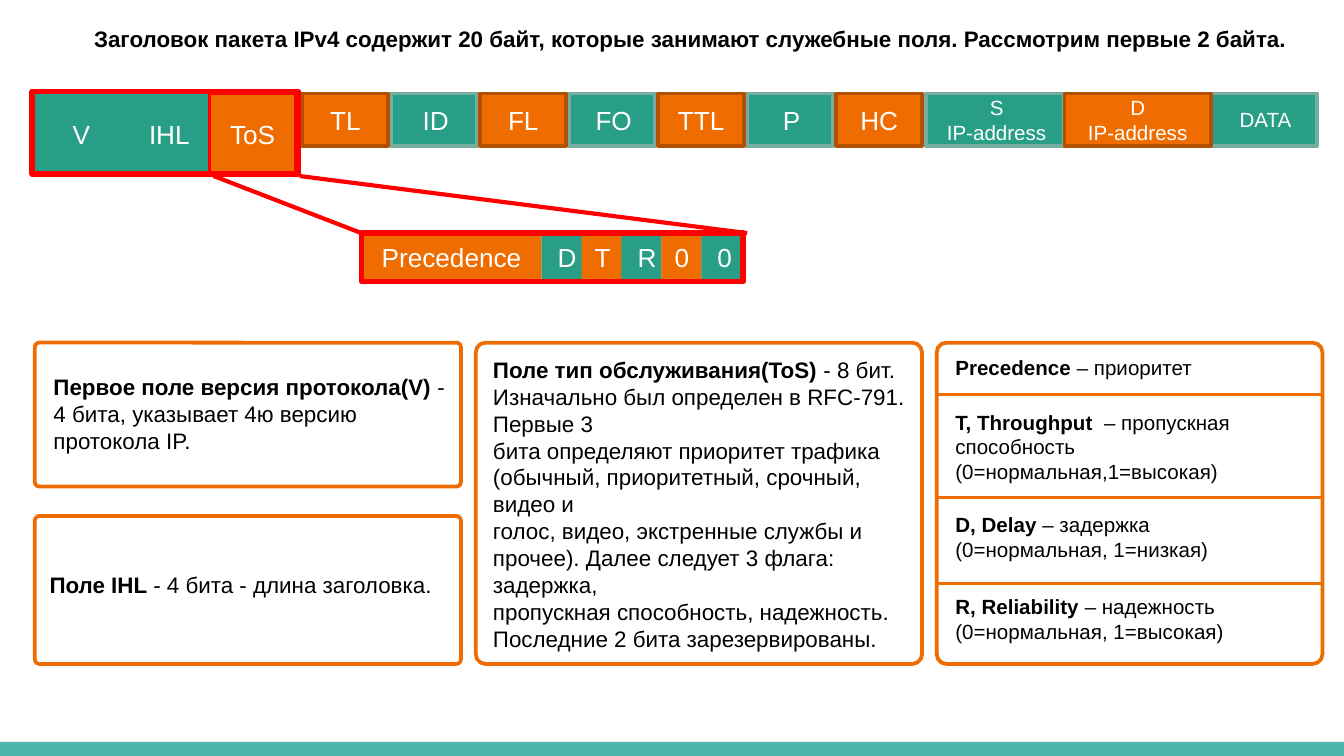
from dataclasses import dataclass
from typing import NamedTuple, Optional

from lxml import etree
from pptx import Presentation
from pptx.dml.color import RGBColor
from pptx.enum.shapes import MSO_CONNECTOR, MSO_SHAPE
from pptx.enum.text import MSO_ANCHOR, MSO_AUTO_SIZE, PP_ALIGN
from pptx.oxml.ns import qn
from pptx.util import Emu, Inches, Pt

RECTANGLE, ROUNDED = MSO_SHAPE.RECTANGLE, MSO_SHAPE.ROUNDED_RECTANGLE
STRAIGHT = MSO_CONNECTOR.STRAIGHT
CENTER, LEFT = PP_ALIGN.CENTER, PP_ALIGN.LEFT
MIDDLE, TOP = MSO_ANCHOR.MIDDLE, MSO_ANCHOR.TOP
NO_AUTOSIZE = MSO_AUTO_SIZE.NONE
TITLE_ONLY = 5
COLUMNS, ROWS = 100, 56.25  # grid of square cells over the slide


@dataclass(frozen=True)
class Theme:
    font: str = "Arial"
    teal: str = "279E85"
    teal_edge: str = "77ACA1"
    orange: str = "EF6C00"
    orange_edge: str = "B15000"
    red: str = "FF0000"
    footer: str = "4DB6AC"
    white: str = "FFFFFF"
    black: str = "000000"
    field_size: float = 14
    body_size: float = 12
    small_size: float = 11


THEME = Theme()


class Box(NamedTuple):
    """Place on the grid, in columns and rows."""
    left: float
    top: float
    width: float
    height: float


class Outline(NamedTuple):
    color: str
    points: float


class Field(NamedTuple):
    text: str
    box: Box
    orange: bool
    outline: Optional[Outline] = None
    size: float = THEME.field_size


class Note(NamedTuple):
    """Text whose first paragraph opens with a bold term."""
    term: str
    text: str
    box: Box
    size: float = THEME.body_size


deck = Presentation()
deck.slide_width = Inches(10)
deck.slide_height = Emu(deck.slide_width * 9 // 16)
slide = deck.slides.add_slide(deck.slide_layouts[TITLE_ONLY])


def across(columns: float) -> Emu:
    return Emu(round(deck.slide_width * columns / COLUMNS))


def down(rows: float) -> Emu:
    return Emu(round(deck.slide_height * rows / ROWS))


def place(box: Box) -> tuple[Emu, Emu, Emu, Emu]:
    return across(box.left), down(box.top), across(box.width), down(box.height)


def format_text(frame, size: float, color: str, align=LEFT, anchor=TOP, bold: bool = False) -> None:
    frame.word_wrap = True
    frame.auto_size = NO_AUTOSIZE
    frame.vertical_anchor = anchor
    for para in frame.paragraphs:
        para.alignment = align
        for span in para.runs:
            span.font.name = THEME.font
            span.font.size = Pt(size)
            span.font.bold = bold
            span.font.color.rgb = RGBColor.from_string(color)


def add_panel(box: Box, fill: Optional[str] = None, outline: Optional[Outline] = None, preset=RECTANGLE):
    panel = slide.shapes.add_shape(preset, *place(box))
    panel.shadow.inherit = False
    if preset == ROUNDED:
        panel.adjustments[0] = 0.03
    if fill:
        panel.fill.solid()
        panel.fill.fore_color.rgb = RGBColor.from_string(fill)
    else:
        panel.fill.background()
    if outline:
        panel.line.color.rgb = RGBColor.from_string(outline.color)
        panel.line.width = Pt(outline.points)
    else:
        panel.line.fill.background()
    return panel


def add_field(field: Field) -> None:
    panel = add_panel(field.box, THEME.orange if field.orange else THEME.teal, field.outline)
    panel.text_frame.text = field.text
    panel.text_frame.margin_left = across(1 if field.orange else 1.2)
    format_text(panel.text_frame, field.size, THEME.white, CENTER, MIDDLE)


def add_line(start: tuple[float, float], end: tuple[float, float], outline: Outline) -> None:
    line = slide.shapes.add_connector(STRAIGHT, across(start[0]), down(start[1]), across(end[0]), down(end[1]))
    line.line.color.rgb = RGBColor.from_string(outline.color)
    line.line.width = Pt(outline.points)
    etree.SubElement(line._element.spPr, qn("a:effectLst"))


def add_note(note: Note) -> None:
    frame = slide.shapes.add_textbox(*place(note.box)).text_frame
    frame.text = note.text
    first = frame.paragraphs[0]
    rest = first.text
    first.text = note.term
    first.add_run().text = rest
    format_text(frame, note.size, THEME.black)
    first.runs[0].font.bold = True


add_panel(Box(0, 55.2, COLUMNS, ROWS - 55.2), THEME.footer)

title = slide.shapes.title
title.left, title.top, title.width, title.height = place(Box(2.8, 1.4, 97.2, 3))
title.text_frame.text = ("Заголовок пакета IPv4 содержит 20 байт, которые занимают служебные поля. "
                         "Рассмотрим первые 2 байта.")
format_text(title.text_frame, THEME.body_size, THEME.black, CENTER, TOP, bold=True)

# Packet header: the first two bytes are taller than the other fields
HEADER_TOP, TALL, SHORT = 6.95, 6.05, 3.9
FIRST_SHORT, SHORT_STEP, FIELD_WIDTH = 22.5, 6.62, 6.4
EDGES = {True: Outline(THEME.orange_edge, 2), False: Outline(THEME.teal_edge, 2)}

header = [
    Field("V", Box(2.6, HEADER_TOP, 6.7, TALL), False),
    Field("IHL", Box(9.3, HEADER_TOP, FIELD_WIDTH, TALL), False),
    Field("ToS", Box(15.6, HEADER_TOP, FIELD_WIDTH, TALL), True, Outline(THEME.red, 2)),
]
for index, name in enumerate(["TL", "ID", "FL", "FO", "TTL", "P", "HC"]):
    orange = index % 2 == 0
    box = Box(FIRST_SHORT + index * SHORT_STEP, HEADER_TOP, FIELD_WIDTH, SHORT)
    header.append(Field(name, box, orange, EDGES[orange]))
left = 68.9
for name, width, orange in [("S\nIP-address", 10.3, False), ("D\nIP-address", 10.9, True), ("DATA", 7.9, False)]:
    header.append(Field(name, Box(left, HEADER_TOP, width, SHORT), orange, EDGES[orange], THEME.small_size))
    left += width
# Teal fields lie beneath the orange ones
for field in sorted(header, key=lambda item: item.orange):
    add_field(field)

# Bits of the ToS field
BITS = Box(26.9, 17.35, 28.4, 3.6)
PRECEDENCE_WIDTH, FLAG_STEP, FLAG_WIDTH = 13.4, 2.97, 3
add_field(Field("Precedence", BITS._replace(width=PRECEDENCE_WIDTH), True))
for index, flag in enumerate("DTR00"):
    flag_left = BITS.left + PRECEDENCE_WIDTH + index * FLAG_STEP
    add_field(Field(flag, BITS._replace(left=flag_left, width=FLAG_WIDTH), index % 2 == 1))

ZOOM = Outline(THEME.red, 2.25)
add_line((15.9, 13.1), (BITS.left, BITS.top), ZOOM)
add_line((22.3, 13.1), (55.6, BITS.top), ZOOM)
for frame_box in (Box(2.4, 6.8, 19.8, 6.15), BITS):
    add_panel(frame_box, outline=Outline(THEME.red, 3))

# Explanations
CARD_TOP, CARD_HEIGHT = 25.5, 23.9
FLAG_CARD = Box(69.7, CARD_TOP, 28.7, CARD_HEIGHT)
cards = [Box(2.6, CARD_TOP, 31.7, 10.7), Box(2.6, 38.4, 31.7, 11), Box(35.4, CARD_TOP, 33.2, CARD_HEIGHT), FLAG_CARD]
for card in cards:
    add_panel(card, outline=Outline(THEME.orange, 2), preset=ROUNDED)
for row in (29.35, 37, 43.4):
    add_line((FLAG_CARD.left, row), (FLAG_CARD.left + FLAG_CARD.width, row), Outline(THEME.orange, 1.5))

notes = [
    Note("Первое поле версия протокола(V) ", "- 4 бита, указывает 4ю версию протокола IP.", Box(3, 27.3, 32.3, 7.1)),
    Note("Поле IHL ", "- 4 бита - длина заголовка.", Box(2.7, 42, 30.8, 5.4)),
    Note("Поле тип обслуживания(ToS) ",
         "- 8 бит. Изначально был определен в RFC-791. Первые 3\n"
         "бита определяют приоритет трафика (обычный, приоритетный, срочный, видео и\n"
         "голос, видео, экстренные службы и прочее). Далее следует 3 флага: задержка,\n"
         "пропускная способность, надежность. Последние 2 бита зарезервированы.",
         Box(35.7, 26, 34, 23.2)),
]
for term, text, top, height in [
    ("Precedence", " – приоритет", 25.9, 2.9),
    ("T, Throughput  ", "– пропускная\nспособность\n(0=нормальная,1=высокая)", 30, 6.6),
    ("D, Delay ", "– задержка\n(0=нормальная, 1=низкая)", 37.6, 4.7),
    ("R, Reliability ", "– надежность\n(0=нормальная, 1=высокая)", 43.7, 4.7),
]:
    notes.append(Note(term, text, Box(70.1, top, 27.9, height), THEME.small_size))
for note in notes:
    add_note(note)

deck.save("out.pptx")
